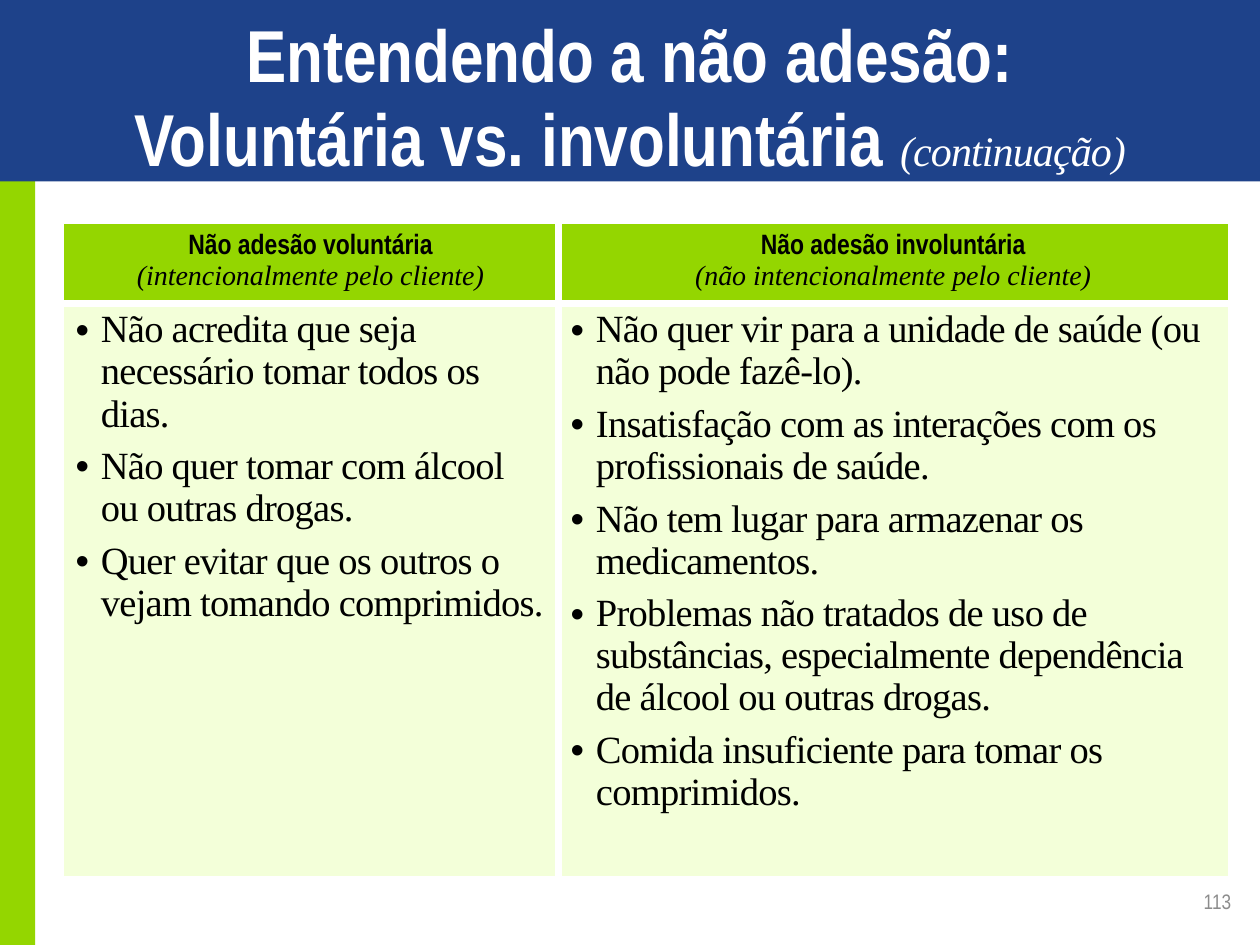
from lxml import etree
from pptx import Presentation
from pptx import util as u
from pptx.dml.color import RGBColor
from pptx.enum import shapes, text
from pptx.oxml import ns

BLUE = RGBColor(0x1E, 0x42, 0x8A)
GREEN = RGBColor(0x94, 0xD6, 0x00)
PALE_GREEN = RGBColor(0xF3, 0xFF, 0xD9)
WHITE = RGBColor(0xFF, 0xFF, 0xFF)
BLACK = RGBColor(0, 0, 0)
GRAY = RGBColor(0x8C, 0x8C, 0x8C)
SANS, SERIF = "Arial Narrow", "Times New Roman"
THIN, THICK = 1, 4.5

COLUMNS = [
    ("Não adesão voluntária", "(intencionalmente pelo cliente)", [
        "Não acredita que seja necessário tomar todos os dias.",
        "Não quer tomar com álcool ou outras drogas.",
        "Quer evitar que os outros o vejam tomando comprimidos.",
    ]),
    ("Não adesão involuntária", "(não intencionalmente pelo cliente)", [
        "Não quer vir para a unidade de saúde (ou não pode fazê-lo).",
        "Insatisfação com as interações com os profissionais de saúde.",
        "Não tem lugar para armazenar os medicamentos.",
        "Problemas não tratados de uso de substâncias, especialmente "
        "dependência de álcool ou outras drogas.",
        "Comida insuficiente para tomar os comprimidos.",
    ]),
]


def add_band(page, left, top, width, height, color):
    band = page.shapes.add_shape(shapes.MSO_SHAPE.RECTANGLE, u.Cm(left),
                                 u.Cm(top), u.Cm(width), u.Cm(height))
    band.shadow.inherit = False
    band.fill.solid()
    band.fill.fore_color.rgb = color
    band.line.fill.background()


def add_textbox(page, left, top, width, height, words, align):
    box = page.shapes.add_textbox(u.Cm(left), u.Cm(top), u.Cm(width), u.Cm(height))
    frame = box.text_frame
    frame.word_wrap = True
    frame.vertical_anchor = text.MSO_ANCHOR.MIDDLE
    frame.text = words
    para = frame.paragraphs[0]
    para.alignment = align
    return para


def style(span, size, face, color, bold=False, italic=False, spacing=0):
    font = span.font
    font.size, font.name = u.Pt(size), face
    font.bold, font.italic = bold, italic
    font.color.rgb = color
    if spacing:
        span._r.get_or_add_rPr().set("spc", str(int(spacing * 100)))


def add_bullet(para):
    properties = para._p.get_or_add_pPr()
    properties.set("marL", str(u.Cm(0.51)))
    properties.set("indent", str(-u.Cm(0.51)))
    etree.SubElement(properties, ns.qn("a:buFont"), typeface="Arial")
    etree.SubElement(properties, ns.qn("a:buChar"), char="•")


def paint_cell(cell, color, widths):
    """Border widths are in points: left, right, top, bottom."""
    properties = cell._tc.get_or_add_tcPr()
    for side, width in zip("LRTB", widths):
        line = etree.SubElement(properties, ns.qn(f"a:ln{side}"), w=str(u.Pt(width)))
        fill = etree.SubElement(line, ns.qn("a:solidFill"))
        etree.SubElement(fill, ns.qn("a:srgbClr"), val=str(WHITE))
    cell.fill.solid()
    cell.fill.fore_color.rgb = color


def fill_heading(cell, heading, note):
    cell.text_frame.text = f"{heading}\n{note}"
    cell.vertical_anchor = text.MSO_ANCHOR.MIDDLE
    first, second = cell.text_frame.paragraphs
    first.alignment = second.alignment = text.PP_ALIGN.CENTER
    style(first.runs[0], 16, SANS, BLACK, bold=True)
    style(second.runs[0], 16, SERIF, BLACK, italic=True)


def fill_reasons(cell, reasons):
    cell.text_frame.text = "\n".join(reasons)
    for para in cell.text_frame.paragraphs:
        add_bullet(para)
        para.line_spacing = u.Pt(24)
        para.space_after = u.Pt(6)
        style(para.runs[0], 22, SERIF, BLACK, spacing=-0.4)


def add_comparison(page):
    table = page.shapes.add_table(2, 2, u.Cm(1.27), u.Cm(4.5),
                                  u.Cm(23.49), u.Cm(13.08)).table
    table.first_row = table.horz_banding = False
    for column, width in zip(table.columns, (9.98, 13.51)):
        column.width = u.Cm(width)
    for row, height in zip(table.rows, (1.52, 11.56)):
        row.height = u.Cm(height)
    for index, (heading, note, reasons) in enumerate(COLUMNS):
        sides = (THIN, THICK) if index == 0 else (THICK, THIN)
        top, body = table.cell(0, index), table.cell(1, index)
        fill_heading(top, heading, note)
        paint_cell(top, GREEN, sides + (THIN, THICK))
        fill_reasons(body, reasons)
        paint_cell(body, PALE_GREEN, sides + (THICK, THIN))


def add_title(page):
    para = add_textbox(page, 1.27, 0.76, 22.86, 2.39,
                       "Entendendo a não adesão:\vVoluntária vs. involuntária ",
                       text.PP_ALIGN.CENTER)
    para.line_spacing = u.Pt(48)
    for span in para.runs:
        style(span, 42, SANS, WHITE, bold=True)
    for words, spacing in (("(continuação", -0.5), (")", 0)):
        span = para.add_run()
        span.text = words
        style(span, 24, SERIF, WHITE, italic=True, spacing=spacing)


def main():
    deck = Presentation()
    deck.slide_width, deck.slide_height = u.Cm(25.4), u.Cm(19.05)
    page = deck.slides.add_slide(deck.slide_layouts[6])

    # Side bar and title band
    add_band(page, 0, 3.33, 0.71, 15.72, GREEN)
    add_band(page, 0, 0, 25.4, 3.66, BLUE)
    add_title(page)

    # Page number
    number = add_textbox(page, 19.15, 17.65, 5.92, 1.02, "113", text.PP_ALIGN.RIGHT)
    style(number.runs[0], 12, SANS, GRAY)

    # Voluntary and involuntary reasons
    add_comparison(page)
    deck.save("out.pptx")


if __name__ == "__main__":
    main()
